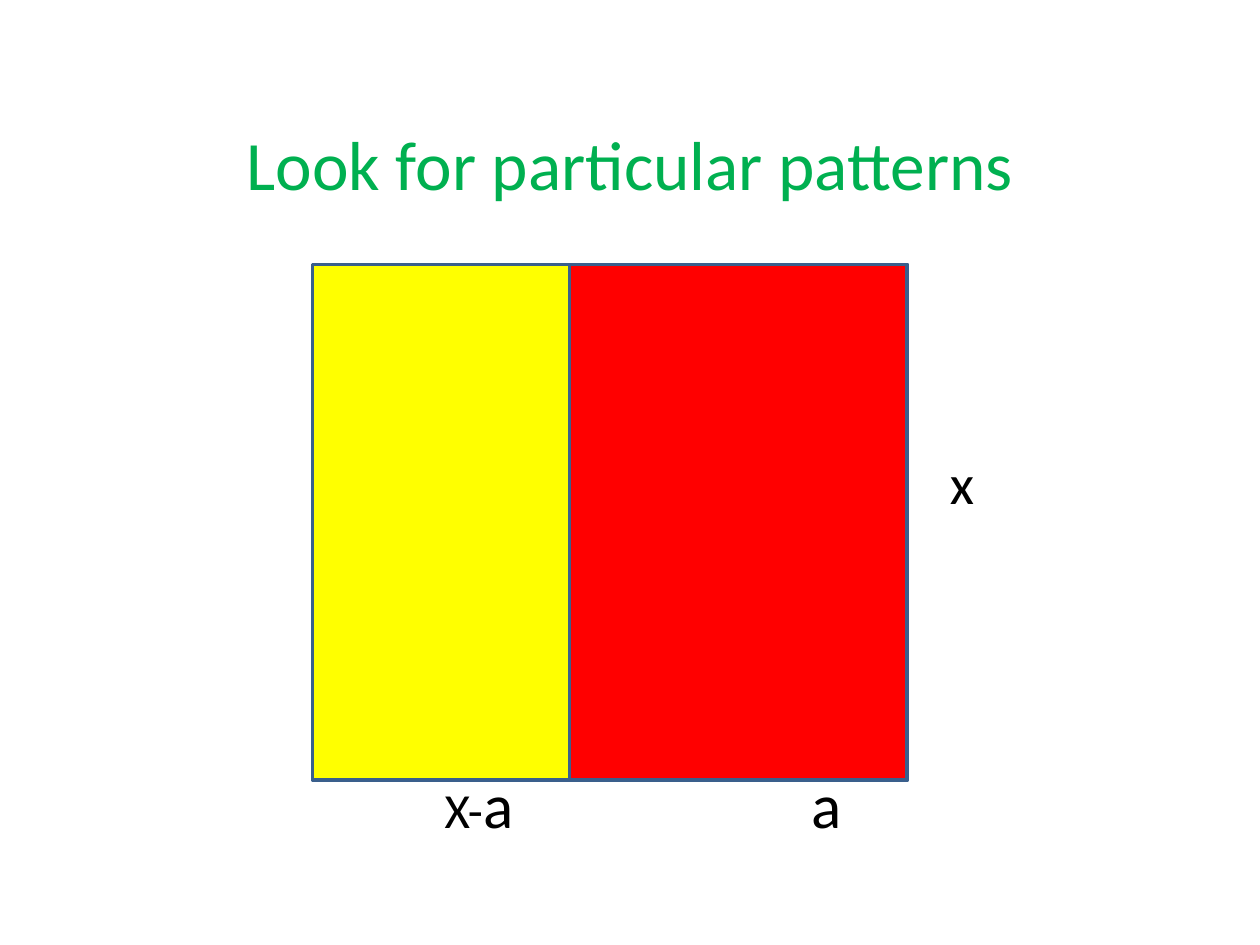
from dataclasses import dataclass

from pptx import Presentation
from pptx.dml.color import RGBColor
from pptx.enum.shapes import MSO_SHAPE as Shape
from pptx.enum.text import MSO_ANCHOR as Anchor, PP_ALIGN as Align
from pptx.util import Inches, Pt


@dataclass(frozen=True)
class Theme:
    font: str = "Calibri"
    title_color: str = "00B050"
    text_color: str = "000000"
    outline: str = "3A5F8C"
    whole: str = "FFFF00"
    strip: str = "FF0000"
    title_size: float = 39.6
    large: float = 36
    medium: float = 32
    small: float = 28
    line_width: float = 2


THEME = Theme()


def add_text(page, bounds, spans, color=THEME.text_color, align=Align.LEFT, **frame_format):
    """Add a one-paragraph text box; spans are (text, size) pairs."""
    box = page.shapes.add_textbox(*map(Inches, bounds))
    frame = box.text_frame
    for name, value in {"word_wrap": True, **frame_format}.items():
        setattr(frame, name, value)
    para = frame.paragraphs[0]
    para.alignment = align
    for text, size in spans:
        span = para.add_run()
        span.text = text
        for name, value in {"name": THEME.font, "size": Pt(size)}.items():
            setattr(span.font, name, value)
        span.font.color.rgb = RGBColor.from_string(color)


def add_rectangle(page, bounds, fill):
    box = page.shapes.add_shape(Shape.RECTANGLE, *map(Inches, bounds))
    box.shadow.inherit = False
    box.fill.solid()
    box.fill.fore_color.rgb = RGBColor.from_string(fill)
    box.line.color.rgb = RGBColor.from_string(THEME.outline)
    box.line.width = Pt(THEME.line_width)


def main():
    deck = Presentation()
    deck.slide_width, deck.slide_height = Inches(10), Inches(7.5)
    page = deck.slides.add_slide(deck.slide_layouts[6])

    # Title
    add_text(page, (0.5, 0.3, 9, 1.32),
             [("Look for particular patterns", THEME.title_size)],
             THEME.title_color, Align.CENTER,
             vertical_anchor=Anchor.BOTTOM, margin_bottom=0)

    # Whole area, with the strip of width a along its right side
    left, top, width, height = 2.48, 2.1, 4.72, 4.09
    strip_width = 2.68
    add_rectangle(page, (left, top, width, height), THEME.whole)
    add_rectangle(page, (left + width - strip_width, top, strip_width, height), THEME.strip)

    # Side lengths
    add_text(page, (7.44, 3.51, 0.79, 0.64), [("x", THEME.medium)])
    label_top, label_height = 6.03, 0.71
    add_text(page, (3.43, label_top, 1.02, label_height),
             [("X-", THEME.small), ("a", THEME.large)])
    add_text(page, (6.34, label_top, 0.79, label_height), [("a", THEME.large)])

    deck.save("out.pptx")


if __name__ == "__main__":
    main()
